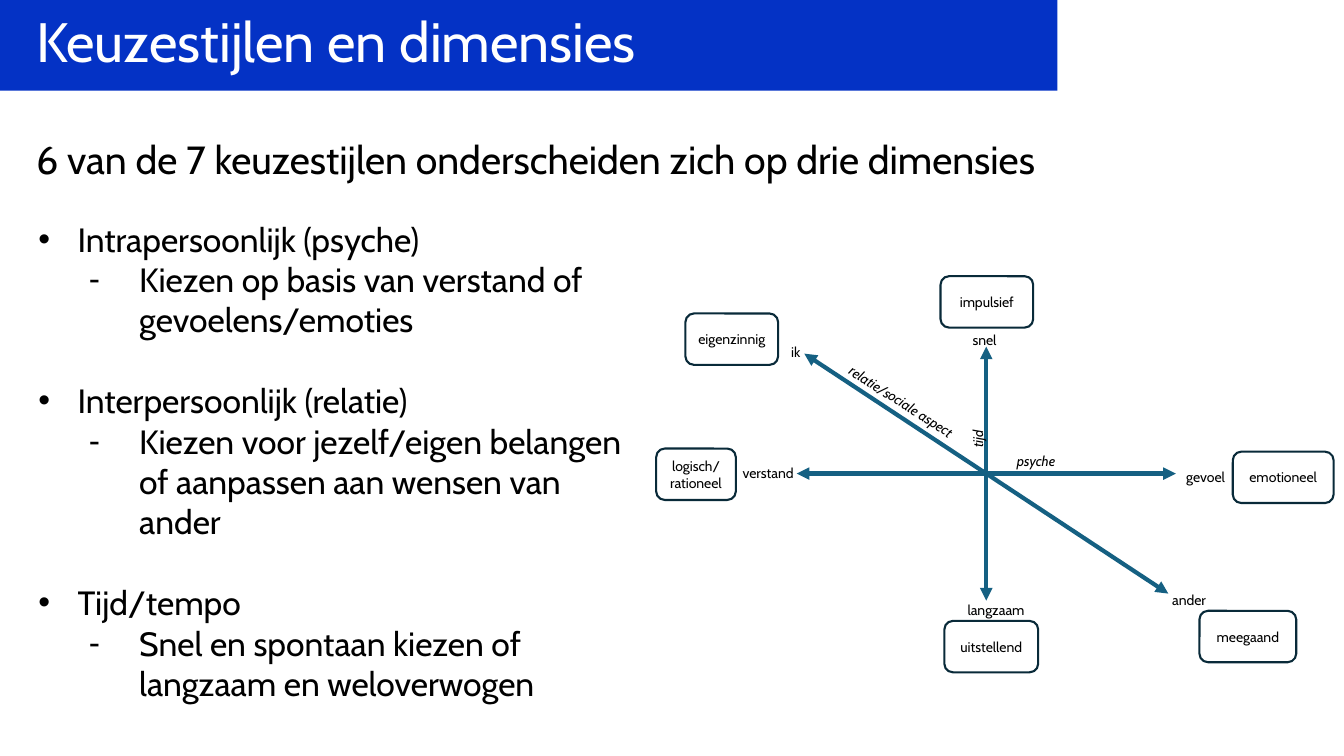
from dataclasses import dataclass

from lxml import etree
from pptx import Presentation
from pptx.dml.color import RGBColor
from pptx.enum.shapes import MSO_CONNECTOR, MSO_SHAPE
from pptx.enum.text import MSO_ANCHOR, MSO_AUTO_SIZE, PP_ALIGN
from pptx.oxml.ns import qn
from pptx.util import Pt

RECT, ROUNDED = MSO_SHAPE.RECTANGLE, MSO_SHAPE.ROUNDED_RECTANGLE
STRAIGHT = MSO_CONNECTOR.STRAIGHT
TOP, MIDDLE = MSO_ANCHOR.TOP, MSO_ANCHOR.MIDDLE
LEFT, CENTER = PP_ALIGN.LEFT, PP_ALIGN.CENTER
NO_FIT, GROW = MSO_AUTO_SIZE.NONE, MSO_AUTO_SIZE.SHAPE_TO_FIT_TEXT

# Content
TITLE = "Keuzestijlen en dimensies"
INTRO = "6 van de 7 keuzestijlen onderscheiden zich op drie dimensies"
DIMENSIONS = [
    ("Intrapersoonlijk (psyche)",
     "Kiezen op basis van verstand of gevoelens/emoties"),
    ("Interpersoonlijk (relatie)",
     "Kiezen voor jezelf/eigen belangen of aanpassen aan wensen van ander"),
    ("Tijd/tempo",
     "Snel en spontaan kiezen of langzaam en weloverwogen"),
]

# Diagram, in points: axes as half-lengths from the centre
AXIS_CENTER = (704.5, 338.3)
AXES = [(135.4, 0), (0, 90.7), (130, 85.7)]
# text, left, top, width
STYLES = [
    ("impulsief", 671.8, 197.3, 66.2),
    ("logisch/\nrationeel", 468.7, 320.4, 56.9),
    ("emotioneel", 880.6, 322.6, 72),
    ("uitstellend", 674.6, 443.5, 67),
    ("meegaand", 856.8, 436.3, 69.1),
    ("eigenzinnig", 489.6, 223.9, 66.2),
]
# text, left, top, width, rotation, italic
LABELS = [
    ("ander", 830.2, 419, 41, 0, False),
    ("ik", 558, 241.9, 22.3, 0, False),
    ("gevoel", 840.2, 331.2, 44.6, 0, False),
    ("verstand", 523.4, 328.3, 54.7, 0, False),
    ("snel", 687.6, 233.3, 33.8, 0, False),
    ("langzaam", 684, 426.2, 59, 0, False),
    ("psyche", 719.3, 319.7, 47.5, 0, True),
    ("tijd", 684, 301.7, 29.5, 270, True),
    ("relatie/sociale aspect", 592.6, 280.8, 113, 32.8, True),
]
STYLE_HEIGHT, LABEL_HEIGHT = 36.7, 20.2


@dataclass(frozen=True)
class Theme:
    font: str = "Cabin"
    banner: RGBColor = RGBColor(0x04, 0x32, 0xC5)
    white: RGBColor = RGBColor(0xFF, 0xFF, 0xFF)
    text: RGBColor = RGBColor(0, 0, 0)
    axis: RGBColor = RGBColor(0x15, 0x60, 0x82)
    border: RGBColor = RGBColor(0x09, 0x2A, 0x39)
    title_size: float = 39.6
    intro_size: float = 28
    list_size: float = 24
    label_size: float = 10


THEME = Theme()


def place(sp, left, top, width, height):
    sp.left, sp.top, sp.width, sp.height = map(Pt, (left, top, width, height))


def format_runs(tf, size, color=THEME.text, italic=False):
    for p in tf.paragraphs:
        for r in p.runs:
            r.font.name = THEME.font
            r.font.size = Pt(size)
            r.font.color.rgb = color
            r.font.italic = italic


def add_label(s, text, box, size, wrap=False, italic=False, rotation=0):
    sp = s.shapes.add_textbox(*map(Pt, box))
    sp.rotation = rotation
    tf = sp.text_frame
    tf.text = text
    tf.word_wrap = wrap
    tf.auto_size = NO_FIT if wrap else GROW
    format_runs(tf, size, italic=italic)


def add_bullet(p, char, indent, hanging):
    pPr = p._p.get_or_add_pPr()
    pPr.set("marL", str(Pt(indent)))
    pPr.set("indent", str(-Pt(hanging)))
    etree.SubElement(pPr, qn("a:buChar"), char=char)


def add_axis(s, dx, dy):
    x, y = AXIS_CENTER
    line = s.shapes.add_connector(
        STRAIGHT, Pt(x - dx), Pt(y - dy), Pt(x + dx), Pt(y + dy))
    line.line.color.rgb = THEME.axis
    line.line.width = Pt(3)
    ln = line.line._get_or_add_ln()
    for end in ("a:headEnd", "a:tailEnd"):
        etree.SubElement(ln, qn(end), type="triangle")
    etree.SubElement(line._element.spPr, qn("a:effectLst"))


def add_style(s, text, left, top, width):
    sp = s.shapes.add_shape(
        ROUNDED, *map(Pt, (left, top, width, STYLE_HEIGHT)))
    sp.shadow.inherit = False
    sp.fill.background()
    sp.line.color.rgb = THEME.border
    sp.line.width = Pt(1.5)
    tf = sp.text_frame
    tf.text = text
    tf.vertical_anchor = MIDDLE
    tf.margin_left = tf.margin_right = 0
    for p in tf.paragraphs:
        p.alignment = CENTER
    format_runs(tf, THEME.label_size)


def main():
    prs = Presentation()
    prs.slide_width, prs.slide_height = Pt(960), Pt(540)
    s = prs.slides.add_slide(prs.slide_layouts[1])
    title, body = s.placeholders

    # Banner, behind the title
    banner = s.shapes.add_shape(RECT, 0, 0, Pt(755.3), Pt(64.8))
    banner.shadow.inherit = False
    banner.fill.solid()
    banner.fill.fore_color.rgb = THEME.banner
    banner.line.fill.background()
    title._element.addprevious(banner._element)

    # Title
    place(title, 18.7, 10, 719.3, 44)
    tf = title.text_frame
    tf.text = TITLE
    tf.vertical_anchor = MIDDLE
    tf.auto_size = NO_FIT
    tf.paragraphs[0].alignment = LEFT
    tf.paragraphs[0].line_spacing = 0.9
    format_runs(tf, THEME.title_size, THEME.white)

    # Introduction
    add_label(s, INTRO, (18.7, 92.9, 875.5, 59), THEME.intro_size, wrap=True)

    # List of dimensions
    place(body, 20.2, 152.6, 434.2, 387)
    tf = body.text_frame
    tf.vertical_anchor = TOP
    tf.auto_size = NO_FIT
    for i, (name, detail) in enumerate(DIMENSIONS):
        head = tf.add_paragraph() if i else tf.paragraphs[0]
        sub = tf.add_paragraph()
        head.text, sub.text = name, detail
        sub.level = 1
        add_bullet(head, "•", 28, 28)
        add_bullet(sub, "-", 72, 36)
        head.space_before = Pt(29 if i else 0)
        sub.space_before = Pt(0)
    format_runs(tf, THEME.list_size)

    # Diagram of axes, labels and styles
    for axis in AXES:
        add_axis(s, *axis)
    for text, left, top, width, rotation, italic in LABELS:
        add_label(s, text, (left, top, width, LABEL_HEIGHT), THEME.label_size,
                  italic=italic, rotation=rotation)
    for style in STYLES:
        add_style(s, *style)

    prs.save("out.pptx")


if __name__ == "__main__":
    main()
